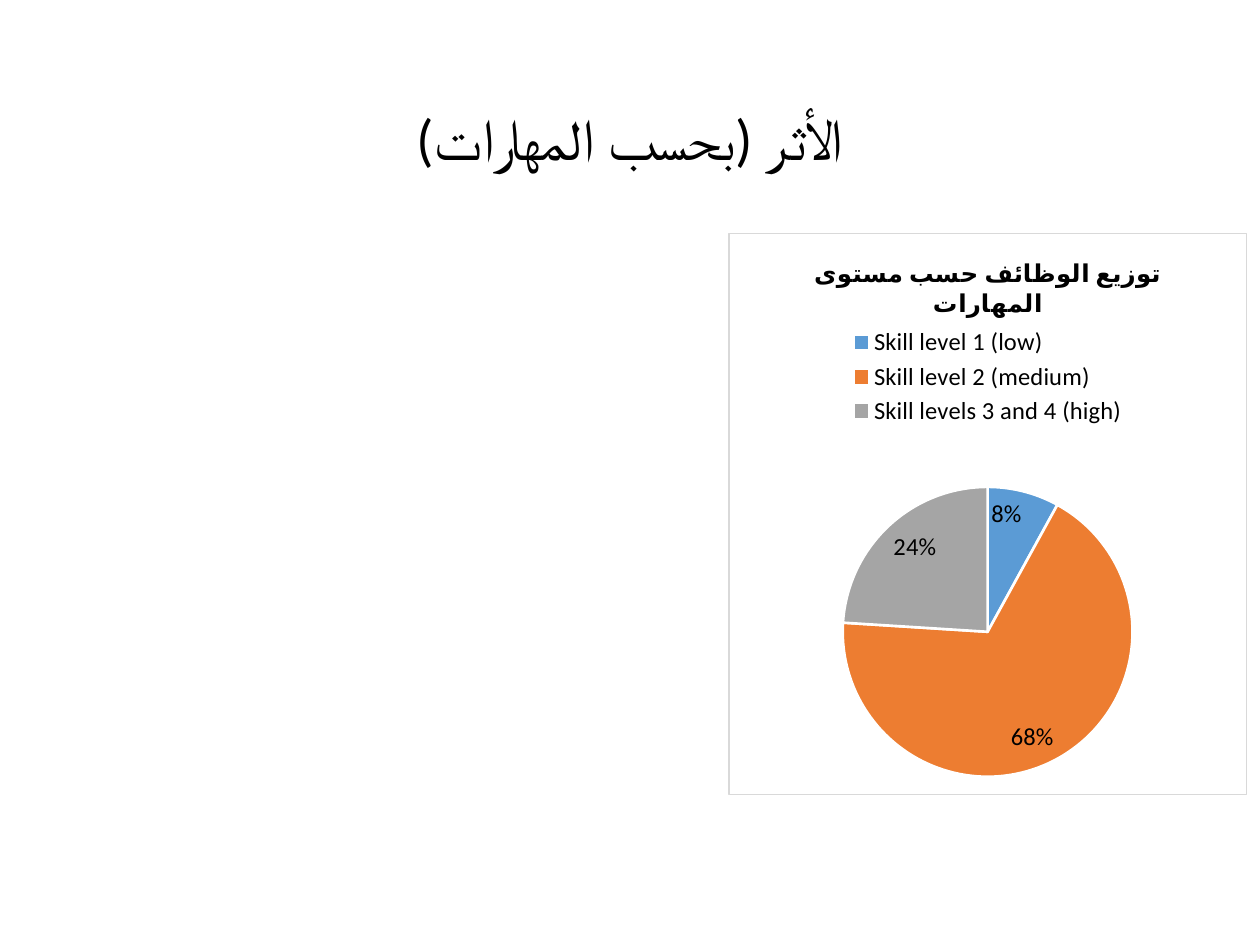
from typing import NamedTuple

from lxml import etree
from pptx import Presentation
from pptx import util as u
from pptx.chart.data import CategoryChartData
from pptx.dml.color import RGBColor
from pptx.enum import chart as ch, text
from pptx.oxml import parse_xml
from pptx.oxml.ns import nsdecls, qn

FONT = "Calibri"
HUES = {"ink": "000000", "paper": "FFFFFF", "edge": "D9D9D9",
        "low": "5B9BD5", "mid": "ED7D31", "high": "A5A5A5"}


class Box(NamedTuple):
    x: float
    y: float
    w: float
    h: float


class Slice(NamedTuple):
    name: str
    share: int
    hue: str


SLICES = [
    Slice("Skill level 1 (low)", 8, "low"),
    Slice("Skill level 2 (medium)", 68, "mid"),
    Slice("Skill levels 3 and 4 (high)", 24, "high"),
]


def tint(hue: str) -> RGBColor:
    return RGBColor.from_string(HUES[hue])


def style(font, size: float, bold: bool = False) -> None:
    font.name, font.size, font.bold = FONT, u.Pt(size), bold
    font.color.rgb = tint("ink")


def write(frame, words: str, *, size: float, bold: bool = False,
          gap: float = 0.9) -> None:
    """Fill a frame with one centred right-to-left paragraph."""
    para = frame.paragraphs[0]
    para.alignment = text.PP_ALIGN.CENTER
    para.line_spacing = gap
    run = para.add_run()
    run.text = words
    style(run.font, size, bold)
    para._p.get_or_add_pPr().set("rtl", "1")
    face = etree.SubElement(run.font._element, qn("a:cs"))
    face.set("typeface", FONT)


def layout(box: Box, inner: bool = False):
    """Make a manual chart layout from fractions of the chart area."""
    target = '<c:layoutTarget val="inner"/>' if inner else ""
    sizes = "".join(f'<c:{key} val="{val}"/>'
                    for key, val in box._asdict().items())
    return parse_xml(
        f'<c:layout {nsdecls("c")}><c:manualLayout>{target}'
        '<c:xMode val="edge"/><c:yMode val="edge"/>'
        f'{sizes}</c:manualLayout></c:layout>')


def frame_area(chart) -> None:
    """Give the chart area its fill and border."""
    area = parse_xml(
        f'<c:spPr {nsdecls("c", "a")}>'
        f'<a:solidFill><a:srgbClr val="{HUES["paper"]}"/></a:solidFill>'
        f'<a:ln w="{u.Pt(0.75)}"><a:solidFill>'
        f'<a:srgbClr val="{HUES["edge"]}"/></a:solidFill></a:ln></c:spPr>')
    chart.element.find(qn("c:chart")).addnext(area)


def add_title(slide, words: str, box: Box) -> None:
    frame = slide.shapes.add_textbox(*map(u.Cm, box)).text_frame
    frame.word_wrap = True
    frame.vertical_anchor = text.MSO_ANCHOR.MIDDLE
    write(frame, words, size=33)


def add_pie(slide, title: str, parts: list[Slice], box: Box) -> None:
    data = CategoryChartData()
    data.categories = [part.name for part in parts]
    data.add_series("Series 1", [part.share for part in parts])
    chart = slide.shapes.add_chart(
        ch.XL_CHART_TYPE.PIE, *map(u.Cm, box), data).chart
    style(chart.font, 14)
    frame_area(chart)

    chart.has_title = True
    write(chart.chart_title.text_frame, title, size=14, bold=True)
    chart.chart_title.include_in_layout = False

    chart.has_legend = True
    legend = chart.legend
    legend.position = ch.XL_LEGEND_POSITION.TOP
    legend.include_in_layout = False
    style(legend.font, 14)
    legend._element.find(qn("c:legendPos")).addnext(
        layout(Box(0.23, 0.16, 0.54, 0.19)))

    area = chart.element.find(".//" + qn("c:plotArea"))
    old = area.find(qn("c:layout"))
    if old is not None:
        area.remove(old)
    area.insert(0, layout(Box(0.22, 0.45, 0.56, 0.52), inner=True))

    plot = chart.plots[0]
    plot.vary_by_categories = True
    plot.has_data_labels = True
    labels = plot.data_labels
    labels.show_percentage, labels.show_value = True, False
    labels.number_format, labels.number_format_is_linked = "0%", False
    labels.position = ch.XL_LABEL_POSITION.INSIDE_END
    style(labels.font, 14)

    for i, part in enumerate(parts):
        look = plot.series[0].points[i].format
        look.fill.solid()
        look.fill.fore_color.rgb = tint(part.hue)
        look.line.color.rgb = tint("paper")
        look.line.width = u.Pt(1.5)


def main() -> None:
    deck = Presentation()
    deck.slide_width, deck.slide_height = u.Cm(25.4), u.Cm(19.05)
    slide = deck.slides.add_slide(deck.slide_layouts[6])
    add_title(slide, "الأثر (بحسب المهارات)", Box(1.75, 1.02, 21.9, 3.68))
    add_pie(slide, "توزيع الوظائف حسب مستوى المهارات", SLICES,
            Box(14.68, 4.7, 10.46, 11.33))
    deck.save("out.pptx")


if __name__ == "__main__":
    main()
